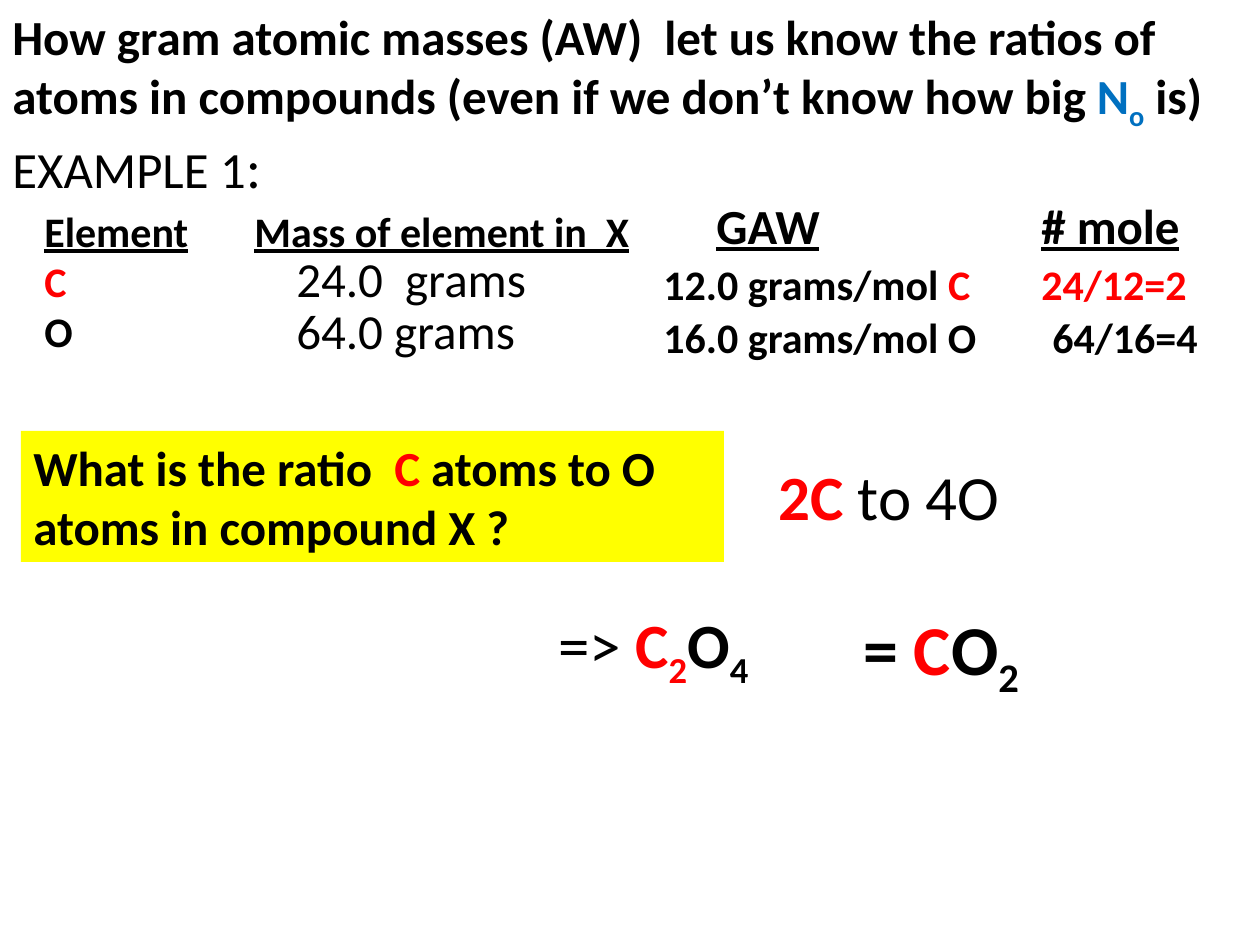
from pptx import Presentation
from pptx import util as u
from pptx.dml.color import RGBColor
from pptx.enum import shapes, text

PX_PER_INCH = 126
BLACK = RGBColor(0x00, 0x00, 0x00)
WHITE = RGBColor(0xFF, 0xFF, 0xFF)
RED = RGBColor(0xFF, 0x00, 0x00)
BLUE = RGBColor(0x00, 0x70, 0xC0)
YELLOW = RGBColor(0xFF, 0xFF, 0x00)

BOLD = {"bold": True}
HEADING = {"bold": True, "underline": True}
CARBON = {"bold": True, "color": RED}
SUBSCRIPT = {"bold": True, "subscript": True}


def px(length):
    return u.Inches(length / PX_PER_INCH)


class SlideBuilder:
    """Holds the text style and the slide being filled."""

    font_name = "Calibri"
    frame_format = {
        "word_wrap": True,
        "auto_size": text.MSO_AUTO_SIZE.SHAPE_TO_FIT_TEXT,
        "vertical_anchor": text.MSO_ANCHOR.TOP,
    }

    def __init__(self, slide):
        self.slide = slide

    def text_box(self, box, size, *paragraphs):
        shape = self.slide.shapes.add_textbox(*map(px, box))
        self.fill_frame(shape.text_frame, size, paragraphs)

    def panel(self, box, fill, size, *paragraphs):
        """Add a filled rectangle without outline that carries text."""
        shape = self.slide.shapes.add_shape(
            shapes.MSO_SHAPE.RECTANGLE, *map(px, box))
        shape.shadow.inherit = False
        shape.fill.solid()
        shape.fill.fore_color.rgb = fill
        shape.line.fill.background()
        self.fill_frame(shape.text_frame, size, paragraphs)

    def fill_frame(self, frame, size, paragraphs):
        """Fill a frame; each paragraph is a list of (wording, style) runs."""
        for name, value in self.frame_format.items():
            setattr(frame, name, value)
        for index, runs in enumerate(paragraphs):
            paragraph = frame.add_paragraph() if index else frame.paragraphs[0]
            paragraph.alignment = text.PP_ALIGN.LEFT
            for wording, style in runs:
                self.add_run(paragraph, wording, {"size": size, **style})

    def add_run(self, paragraph, wording, style):
        run = paragraph.add_run()
        run.text = wording
        values = {
            "name": self.font_name,
            "size": u.Pt(style["size"]),
            "bold": style.get("bold", False),
            "underline": style.get("underline", False),
        }
        for name, value in values.items():
            setattr(run.font, name, value)
        run.font.color.rgb = style.get("color", BLACK)
        if style.get("subscript"):
            run._r.get_or_add_rPr().set("baseline", "-25000")


def add_introduction(builder):
    builder.text_box(
        (0, 0, 1260, 131), 28,
        [("How gram atomic masses (AW)  let us know the ratios of atoms in "
          "compounds (even if we don’t know how big ", BOLD),
         ("N", {**BOLD, "color": BLUE}),
         ("o", {**SUBSCRIPT, "color": BLUE}),
         (" is)", BOLD)])
    builder.text_box((0, 126, 336, 81), 29,
                     [("EXAMPLE 1", {}), (":", {"size": 32})])


def add_mass_columns(builder):
    builder.text_box((32, 199, 252, 165), 24,
                     [("Element", HEADING)], [("C", CARBON)], [("O", BOLD)])
    builder.text_box((242, 199, 546, 63), 24,
                     [("Mass of element in  X", HEADING)])
    builder.text_box((704, 189, 336, 72), 28, [("GAW", HEADING)])
    builder.panel((1029, 189, 199, 72), WHITE, 28, [("# mole", HEADING)])

    for top, mass in ((242, "24.0  grams"), (294, "64.0 grams")):
        builder.text_box((284, top, 315, 72), 28, [(mass, {})])

    rows = (
        (252, "C", CARBON, 1029, "24/12=2", "12.0"),
        (305, "O", BOLD, 1040, "64/16=4", "16.0"),
    )
    for top, element, style, mole_left, moles, weight in rows:
        builder.text_box((651, top, 410, 63), 24,
                         [(f"{weight} grams/mol ", BOLD), (element, style)])
        builder.text_box((mole_left, top, 189, 63), 24, [(moles, style)])


def add_ratio(builder):
    builder.panel(
        (21, 431, 703, 131), YELLOW, 28,
        [("What is the ratio  ", BOLD), ("C", CARBON),
         (" atoms to O atoms in compound X ?", BOLD)])
    builder.text_box((766, 451, 431, 89), 36, [("2C", CARBON), (" to 4O", {})])
    builder.text_box(
        (546, 599, 325, 89), 36,
        [("=> ", {}), ("C", CARBON), ("2", {**SUBSCRIPT, "color": RED}),
         ("O", BOLD), ("4", SUBSCRIPT)])
    builder.text_box(
        (851, 599, 305, 97), 40,
        [("= ", BOLD), ("C", CARBON), ("O", BOLD), ("2", SUBSCRIPT)])


def main():
    presentation = Presentation()
    presentation.slide_width = px(1260)
    presentation.slide_height = px(945)
    blank_layout = presentation.slide_layouts[6]
    builder = SlideBuilder(presentation.slides.add_slide(blank_layout))
    add_introduction(builder)
    add_mass_columns(builder)
    add_ratio(builder)
    presentation.save("out.pptx")


if __name__ == "__main__":
    main()
